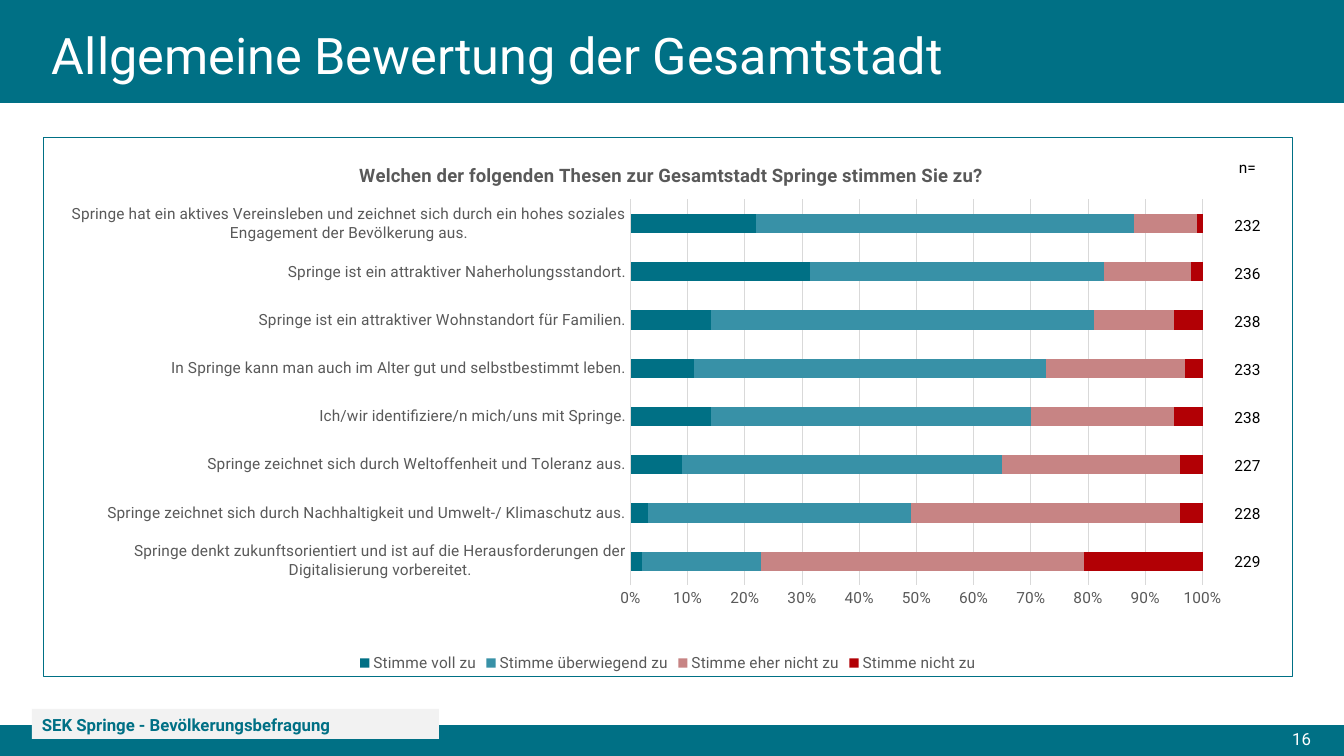
from dataclasses import dataclass

from lxml import etree
from pptx import Presentation
from pptx.chart.data import CategoryChartData
from pptx.dml.color import RGBColor
from pptx.enum.chart import XL_CHART_TYPE as ChartType
from pptx.enum.chart import XL_LEGEND_POSITION as LegendPos
from pptx.enum.chart import XL_TICK_MARK as Tick
from pptx.enum.shapes import MSO_SHAPE as Shape
from pptx.enum.text import MSO_ANCHOR as Anchor
from pptx.enum.text import PP_ALIGN as Align
from pptx.oxml import parse_xml
from pptx.oxml.ns import nsdecls, qn
from pptx.util import Pt

EMU_PER_PX = 914400 / 100.8


@dataclass(frozen=True)
class Theme:
    font: str = "Roboto"
    teal: str = "007085"
    blue: str = "3891A7"
    rose: str = "C78484"
    red: str = "B20005"
    white: str = "FFFFFF"
    black: str = "000000"
    label: str = "F2F2F2"
    gray: str = "595959"
    grid: str = "D9D9D9"
    title: float = 36
    footer: float = 12
    chart_title: float = 13.2
    body: float = 11


T = Theme()

# Thesis, number of answers, percentages per answer; top to bottom
THESES = [
    ("Springe hat ein aktives Vereinsleben und zeichnet sich durch ein hohes "
     "soziales Engagement der Bevölkerung aus.", 232, (22, 66, 11, 1)),
    ("Springe ist ein attraktiver Naherholungsstandort.", 236, (31, 51, 15, 2)),
    ("Springe ist ein attraktiver Wohnstandort für Familien.", 238, (14, 67, 14, 5)),
    ("In Springe kann man auch im Alter gut und selbstbestimmt leben.", 233, (11, 61, 24, 3)),
    ("Ich/wir identifiziere/n mich/uns mit Springe.", 238, (14, 56, 25, 5)),
    ("Springe zeichnet sich durch Weltoffenheit und Toleranz aus.", 227, (9, 56, 31, 4)),
    ("Springe zeichnet sich durch Nachhaltigkeit und Umwelt-/ Klimaschutz aus.",
     228, (3, 46, 47, 4)),
    ("Springe denkt zukunftsorientiert und ist auf die Herausforderungen der "
     "Digitalisierung vorbereitet.", 229, (2, 21, 57, 21)),
]
ANSWERS = [
    ("Stimme voll zu", T.teal),
    ("Stimme überwiegend zu", T.blue),
    ("Stimme eher nicht zu", T.rose),
    ("Stimme nicht zu", T.red),
]


def px(*lengths):
    return [round(n * EMU_PER_PX) for n in lengths]


def rgb(color):
    return RGBColor.from_string(color)


def style_font(font, size, color, bold=False):
    font.name, font.size, font.bold = T.font, Pt(size), bold
    font.color.rgb = rgb(color)


def add_bar(s, box, color):
    bar = s.shapes.add_shape(Shape.RECTANGLE, *px(*box))
    bar.shadow.inherit = False
    bar.fill.solid()
    bar.fill.fore_color.rgb = rgb(color)
    bar.line.fill.background()
    return bar


def write(sp, text, size, color, bold=False, align=Align.LEFT,
          anchor=Anchor.MIDDLE, spacing=1.0):
    tf = sp.text_frame
    tf.word_wrap = True
    tf.vertical_anchor = anchor
    p = tf.paragraphs[0]
    p.alignment, p.line_spacing = align, spacing
    r = p.add_run()
    r.text = text
    style_font(r.font, size, color, bold)


def add_text(s, box, text, size, color, **options):
    sp = s.shapes.add_textbox(*px(*box))
    write(sp, text, size, color, **options)
    return sp


def add_count(s, top, text):
    sp = add_text(s, (1224, top, 47, 29), text, T.body, T.black,
                  align=Align.CENTER, anchor=Anchor.TOP)
    sp.text_frame.margin_left = sp.text_frame.margin_right = 0


def set_layout(parent, index, **values):
    """Place a chart element by fractions of the chart area."""
    for old in parent.findall(qn("c:layout")):
        parent.remove(old)
    layout = parse_xml(f"<c:layout {nsdecls('c')}><c:manualLayout/></c:layout>")
    for tag, value in values.items():
        etree.SubElement(layout[0], qn(f"c:{tag}")).set("val", str(value))
    parent.insert(index, layout)


def frame_chart(chart_xml):
    """Give the chart area a white fill and a thin teal border."""
    chart_xml.addnext(parse_xml(
        f"<c:spPr {nsdecls('c', 'a')}>"
        f'<a:solidFill><a:srgbClr val="{T.white}"/></a:solidFill>'
        f'<a:ln w="{Pt(0.75)}"><a:solidFill><a:srgbClr val="{T.teal}"/></a:solidFill></a:ln>'
        "</c:spPr>"))


def style_line(line):
    line.color.rgb = rgb(T.grid)
    line.width = Pt(0.75)


def style_axes(chart):
    for axis in (chart.category_axis, chart.value_axis):
        axis.major_tick_mark = axis.minor_tick_mark = Tick.NONE
        style_font(axis.tick_labels.font, T.body, T.gray)
    style_line(chart.category_axis.format.line)
    values = chart.value_axis
    values.minimum_scale, values.maximum_scale, values.major_unit = 0, 1, 0.1
    values.format.line.fill.background()
    values.has_major_gridlines = True
    style_line(values.major_gridlines.format.line)
    values.tick_labels.number_format = "0%"
    values.tick_labels.number_format_is_linked = False


def add_theses_chart(s, box):
    rows = THESES[::-1]
    data = CategoryChartData()
    data.categories = [thesis for thesis, _, _ in rows]
    for i, (answer, _) in enumerate(ANSWERS):
        data.add_series(answer, [shares[i] for _, _, shares in rows])
    chart = s.shapes.add_chart(ChartType.BAR_STACKED_100, *px(*box), data).chart
    style_font(chart.font, T.body, T.black)

    chart.has_title = True
    r = chart.chart_title.text_frame.paragraphs[0].add_run()
    r.text = "Welchen der folgenden Thesen zur Gesamtstadt Springe stimmen Sie zu?"
    style_font(r.font, T.chart_title, T.gray, bold=True)
    chart.has_legend = True
    chart.legend.position = LegendPos.BOTTOM
    chart.legend.include_in_layout = False
    style_font(chart.legend.font, T.body, T.gray)

    plot = chart.plots[0]
    plot.vary_by_categories = False
    plot.gap_width, plot.overlap = 150, 100
    for series, (_, color) in zip(plot.series, ANSWERS):
        series.format.fill.solid()
        series.format.fill.fore_color.rgb = rgb(color)
    style_axes(chart)

    area = chart.value_axis._element.getparent()
    chart_xml = area.getparent()
    frame_chart(chart_xml)
    set_layout(area, 0, layoutTarget="inner", xMode="edge", yMode="edge",
               x=0.47, y=0.115, w=0.458, h=0.716)
    set_layout(chart_xml.find(qn("c:title")), 1,
               xMode="edge", yMode="edge", x=0.25, y=0.04)


def main():
    prs = Presentation()
    prs.slide_width, prs.slide_height = px(1344, 756)
    s = prs.slides.add_slide(prs.slide_layouts[6])

    add_bar(s, (0, 0, 1344, 103), T.teal)
    add_bar(s, (0, 725, 1344, 31), T.teal)
    add_text(s, (879, 724, 442, 30), "16", T.footer, T.white, align=Align.RIGHT)
    label = add_bar(s, (32, 709, 407, 30), T.label)
    write(label, "SEK Springe - Bevölkerungsbefragung", T.footer, T.teal,
          bold=True, spacing=1.07)
    add_theses_chart(s, (43, 137, 1250, 540))
    add_text(s, (42, 21, 1159, 74), "Allgemeine Bewertung der Gesamtstadt",
             T.title, T.white, spacing=0.9)

    add_count(s, 153, "n=")
    for i, (_, count, _) in enumerate(THESES):
        add_count(s, 211 + 48 * i, str(count))

    prs.save("out.pptx")


if __name__ == "__main__":
    main()
